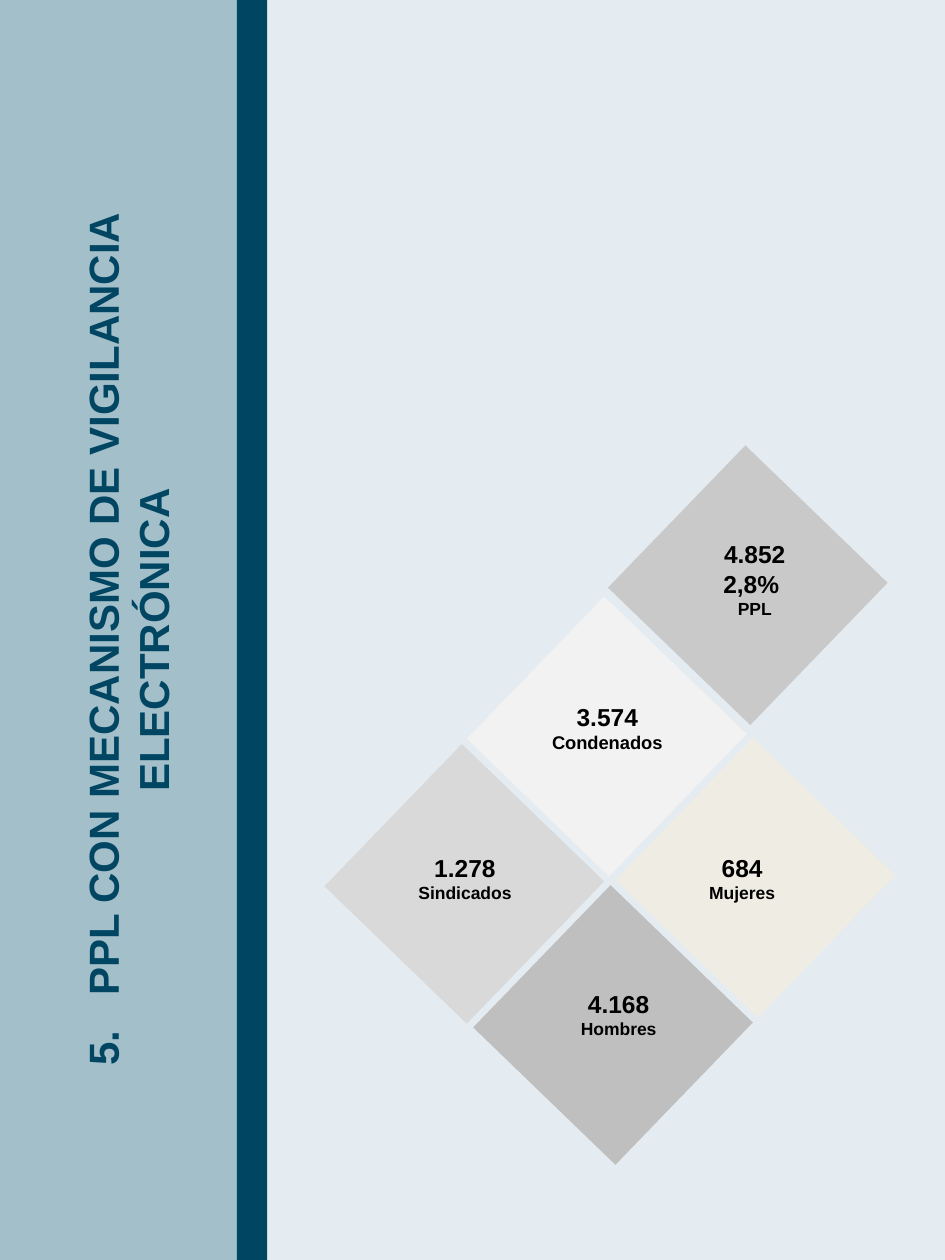
from dataclasses import dataclass
from pptx import Presentation
from pptx.util import Inches, Pt
from pptx.dml.color import RGBColor
from pptx.enum import shapes, text


@dataclass(frozen=True)
class Theme:
    font: str = "Arial"
    back: str = "E4ECF1"
    band: str = "A3BFC9"
    navy: str = "004663"
    ink: str = "000000"
    title: float = 24
    value: float = 14
    label: float = 10


THEME = Theme()
SIDE = 1.57
TILT = 44
WIDE = 1.38


def add_rect(slide, box, color, turn=0):
    rect = slide.shapes.add_shape(
        shapes.MSO_SHAPE.RECTANGLE, *map(Inches, box))
    rect.rotation = turn
    rect.shadow.inherit = False
    rect.fill.solid()
    rect.fill.fore_color.rgb = RGBColor.from_string(color)
    rect.line.fill.background()


def add_frame(slide, box):
    frame = slide.shapes.add_textbox(*map(Inches, box)).text_frame
    frame.word_wrap = True
    return frame


def style(para, size, color):
    para.alignment = text.PP_ALIGN.CENTER
    font = para.font
    font.name, font.size, font.bold = THEME.font, Pt(size), True
    font.color.rgb = RGBColor.from_string(color)


def add_banner(slide, box, number, title):
    left, top, width, height = box
    strip = 0.24
    panel = width - strip
    add_rect(slide, (left, top, panel, height), THEME.band)
    add_rect(slide, (left + panel, top, strip, height), THEME.navy)

    frame = add_frame(slide, (left + 0.56, top + 0.75, 1.01, 8.66))
    frame._txBody.bodyPr.set("vert", "vert270")
    para = frame.paragraphs[0]
    style(para, THEME.title, THEME.navy)
    para.add_run().text = number
    gap = para.add_run()
    gap.text = " "
    gap._r.get_or_add_rPr().set("spc", "1330")
    para.add_run().text = title


def add_label(slide, box, values, label, size):
    frame = add_frame(slide, box)
    lines = [(value, THEME.value) for value in values] + [(label, size)]
    for i, (line, points) in enumerate(lines):
        para = frame.paragraphs[0] if i == 0 else frame.add_paragraph()
        para.text = line
        style(para, points, THEME.ink)


def add_tiles(slide, box, tiles):
    left, top = box[:2]
    for x, y, color, *rest in tiles:
        add_rect(slide, (left + x, top + y, SIDE, SIDE), color, TILT)
    for x, y, color, dx, dy, values, label, size in tiles:
        high = 0.59 if len(values) == 1 else 0.71
        spot = (left + x + dx, top + y + dy, WIDE, high)
        add_label(slide, spot, values, label, size)


def main():
    deck = Presentation()
    deck.slide_width, deck.slide_height = Inches(7.5), Inches(10)
    slide = deck.slides.add_slide(deck.slide_layouts[6])
    fill = slide.background.fill
    fill.solid()
    fill.fore_color.rgb = RGBColor.from_string(THEME.back)

    add_banner(slide, (0, 0, 2.12, 10), "5.",
               "PPL CON MECANISMO DE VIGILANCIA ELECTRÓNICA")
    small = THEME.label
    add_tiles(slide, (2.9, 3.86, 3.88, 5.06), [
        (1.13, 1.2, "F2F2F2", 0.1, 0.46, ["3.574"], "Condenados", 10.5),
        (2.31, 2.32, "EFEDE3", -0.01, 0.54, ["684"], "Mujeres", small),
        (0, 2.37, "D9D9D9", 0.1, 0.49, ["1.278"], "Sindicados", small),
        (1.18, 3.49, "BFBFBF", 0.14, 0.45, ["4.168"], "Hombres", small),
        (2.25, 0, "C9C9C9", 0.15, 0.37, ["4.852", "2,8% "], "PPL", small),
    ])
    deck.save("out.pptx")


if __name__ == "__main__":
    main()
